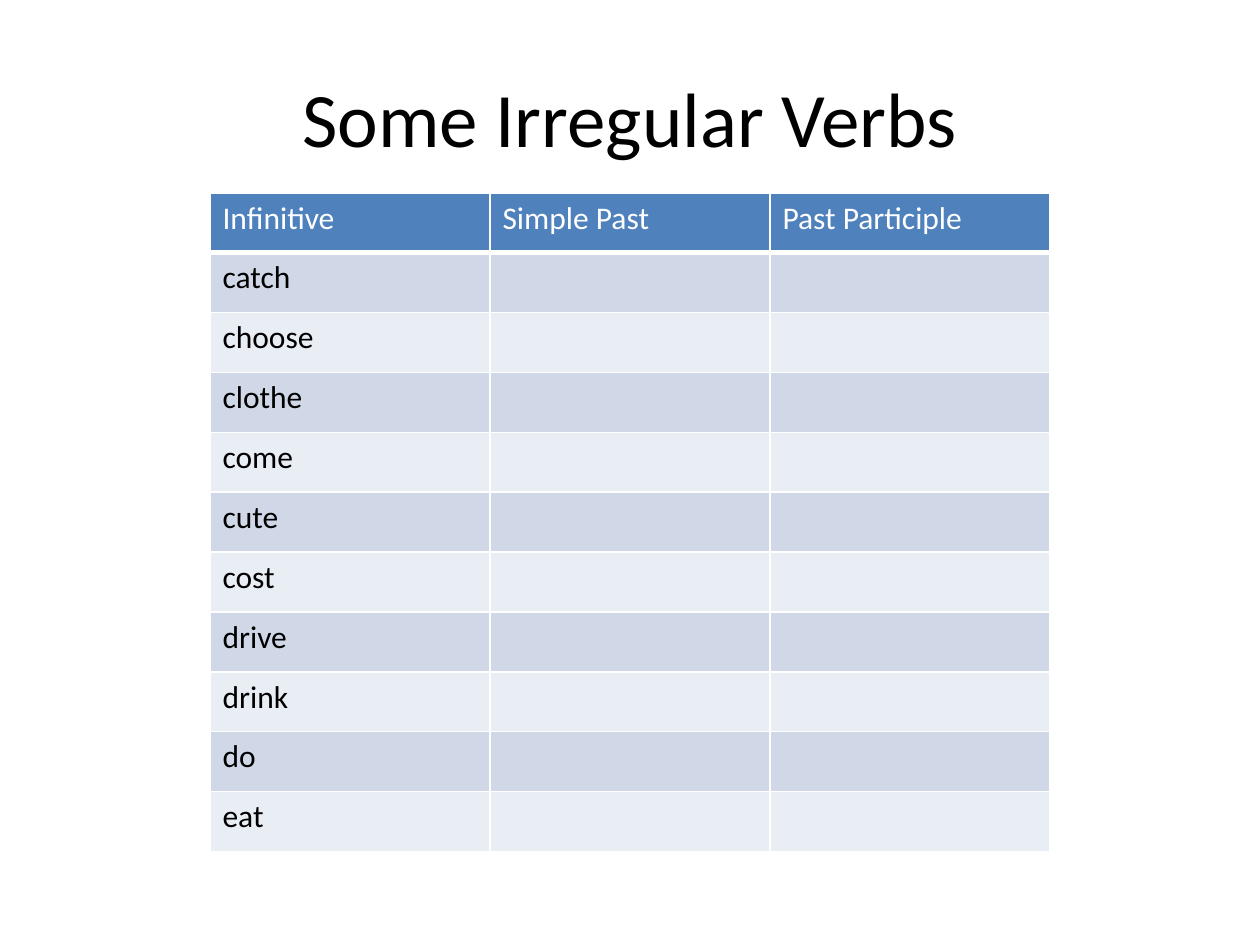
import dataclasses

import lxml.etree
import pptx
import pptx.dml.color
import pptx.enum.text
import pptx.oxml.ns
import pptx.util


@dataclasses.dataclass(frozen=True)
class Theme:
    font: str = "Calibri"
    title_size: int = 44
    table_size: int = 18
    ink: str = "000000"
    paper: str = "FFFFFF"
    header: str = "4F81BD"
    bands: tuple = ("D0D8E8", "E9EDF4")
    rule: float = 1
    header_rule: float = 3


THEME = Theme()
SLIDE_WIDTH = pptx.util.Inches(10)
SLIDE_HEIGHT = pptx.util.Inches(7.5)
HEADINGS = ("Infinitive", "Simple Past", "Past Participle")
VERBS = ("catch", "choose", "clothe", "come", "cute",
         "cost", "drive", "drink", "do", "eat")


def rgb(value):
    return pptx.dml.color.RGBColor.from_string(value)


def write_text(frame, text, *, size, color, align=None):
    para = frame.paragraphs[0]
    para.alignment = align
    span = para.add_run()
    span.text = text
    span.font.name = THEME.font
    span.font.size = pptx.util.Pt(size)
    span.font.bold = False
    span.font.color.rgb = rgb(color)


def add_title(page, text):
    box = page.shapes.title
    box.left, box.width = int(SLIDE_WIDTH * 0.05), int(SLIDE_WIDTH * 0.9)
    box.top, box.height = int(SLIDE_HEIGHT * 0.04), pptx.util.Inches(1.25)
    box.text_frame.vertical_anchor = pptx.enum.text.MSO_ANCHOR.MIDDLE
    write_text(box.text_frame, text, size=THEME.title_size, color=THEME.ink,
               align=pptx.enum.text.PP_ALIGN.CENTER)


def set_borders(cell, bottom):
    """Rule all four sides of a cell; only the bottom width varies."""
    qn = pptx.oxml.ns.qn
    properties = cell._tc.get_or_add_tcPr()
    widths = {"L": THEME.rule, "R": THEME.rule, "T": THEME.rule, "B": bottom}
    for side, width in widths.items():
        line = lxml.etree.SubElement(properties, qn(f"a:ln{side}"),
                                     w=str(pptx.util.Pt(width)))
        fill = lxml.etree.SubElement(line, qn("a:solidFill"))
        lxml.etree.SubElement(fill, qn("a:srgbClr"), val=THEME.paper)


def format_cell(cell, text, *, fill, color, bottom):
    set_borders(cell, bottom)
    cell.fill.solid()
    cell.fill.fore_color.rgb = rgb(fill)
    if text:
        write_text(cell.text_frame, text, size=THEME.table_size, color=color)


def add_verb_table(page, headings, verbs):
    """Add a centred table with empty columns for the learner's answers."""
    width = int(SLIDE_WIDTH * 2 / 3)
    rows = [headings] + [(verb, "", "") for verb in verbs]
    table = page.shapes.add_table(
        len(rows), len(headings), (SLIDE_WIDTH - width) // 2,
        pptx.util.Inches(1.53), width, pptx.util.Inches(5.23)).table
    for row_index, row in enumerate(rows):
        if row_index == 0:
            style = dict(fill=THEME.header, color=THEME.paper,
                         bottom=THEME.header_rule)
        else:
            style = dict(fill=THEME.bands[(row_index - 1) % 2],
                         color=THEME.ink, bottom=THEME.rule)
        for column_index, text in enumerate(row):
            format_cell(table.cell(row_index, column_index), text, **style)


def main():
    deck = pptx.Presentation()
    deck.slide_width, deck.slide_height = SLIDE_WIDTH, SLIDE_HEIGHT
    page = deck.slides.add_slide(deck.slide_layouts.get_by_name("Title Only"))
    add_title(page, "Some Irregular Verbs")
    add_verb_table(page, HEADINGS, VERBS)
    deck.save("out.pptx")


if __name__ == "__main__":
    main()
